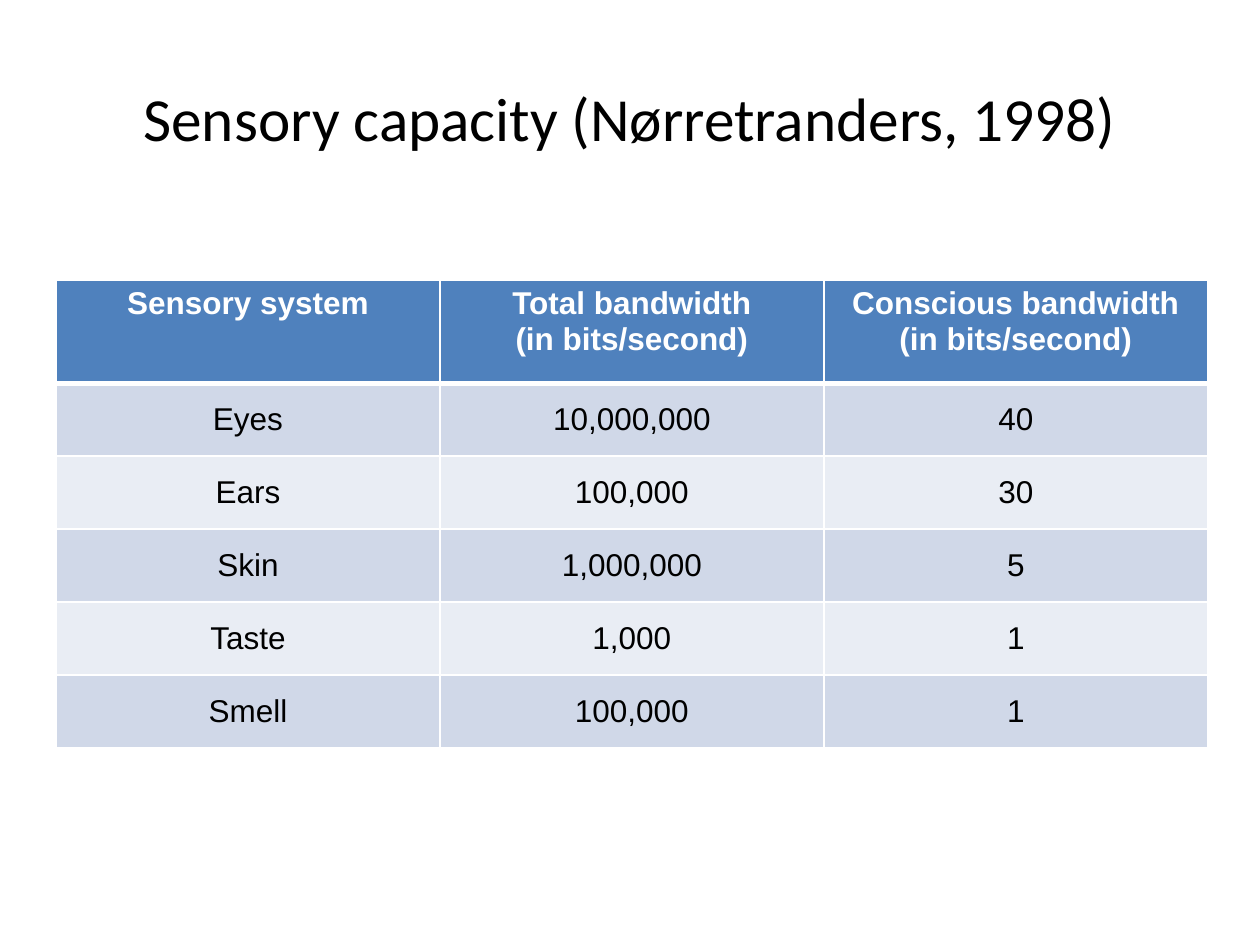
import pptx
import pptx.util
import pptx.dml.color
import pptx.enum.text
import pptx.oxml.ns
import lxml.etree

Pt = pptx.util.Pt
Align = pptx.enum.text.PP_ALIGN
Anchor = pptx.enum.text.MSO_ANCHOR

TITLE = "Sensory capacity (Nørretranders, 1998)"
ROWS = [
    (["Sensory system"],
     ["Total bandwidth", "(in bits/second)"],
     ["Conscious bandwidth", "(in bits/second)"]),
    (["Eyes"], ["10,000,000"], ["40"]),
    (["Ears"], ["100,000"], ["30"]),
    (["Skin"], ["1,000,000"], ["5"]),
    (["Taste"], ["1,000"], ["1"]),
    (["Smell"], ["100,000"], ["1"]),
]
COLORS = {"head": "4F81BD", "odd": "D0D8E8", "even": "E9EDF4",
          "white": "FFFFFF", "black": "000000"}
LEFT, TOP, WIDTH = 32, 160, 658.2
HEAD, BODY = 59, 41.7


def color(name):
    return pptx.dml.color.RGBColor.from_string(COLORS[name])


def write(frame, lines, font, size, ink, bold=False):
    for i, line in enumerate(lines):
        para = frame.paragraphs[0] if i == 0 else frame.add_paragraph()
        para.alignment = Align.CENTER
        run = para.add_run()
        run.text = line
        run.font.name = font
        run.font.size = Pt(size)
        run.font.bold = bold
        run.font.color.rgb = color(ink)


def border(cell, side, width):
    qn = pptx.oxml.ns.qn
    props = cell._tc.get_or_add_tcPr()
    line = lxml.etree.SubElement(props, qn("a:ln" + side), w=str(Pt(width)))
    fill = lxml.etree.SubElement(line, qn("a:solidFill"))
    lxml.etree.SubElement(fill, qn("a:srgbClr"), val=COLORS["white"])


deck = pptx.Presentation()
deck.slide_width, deck.slide_height = Pt(720), Pt(540)
slide = deck.slides.add_slide(deck.slide_layouts[6])

title = slide.shapes.add_textbox(Pt(36), Pt(21.6), Pt(648), Pt(90)).text_frame
title.word_wrap = True
title.vertical_anchor = Anchor.MIDDLE
write(title, [TITLE], "Calibri", 35, "black")

count = len(ROWS[0])
high = HEAD + BODY * (len(ROWS) - 1)
table = slide.shapes.add_table(
    len(ROWS), count, Pt(LEFT), Pt(TOP), Pt(WIDTH), Pt(high)).table
for col in table.columns:
    col.width = Pt(WIDTH / count)

for r, row in enumerate(ROWS):
    head = r == 0
    table.rows[r].height = Pt(HEAD if head else BODY)
    shade = "head" if head else "odd" if r % 2 else "even"
    for c, lines in enumerate(row):
        cell = table.cell(r, c)
        cell.vertical_anchor = Anchor.TOP if head else Anchor.MIDDLE
        write(cell.text_frame, lines, "Arial", 18,
              "white" if head else "black", head)
        for side in "LRTB":
            thick = (r, side) in [(0, "B"), (1, "T")]
            border(cell, side, 3 if thick else 1)
        cell.fill.solid()
        cell.fill.fore_color.rgb = color(shade)

deck.save("out.pptx")
